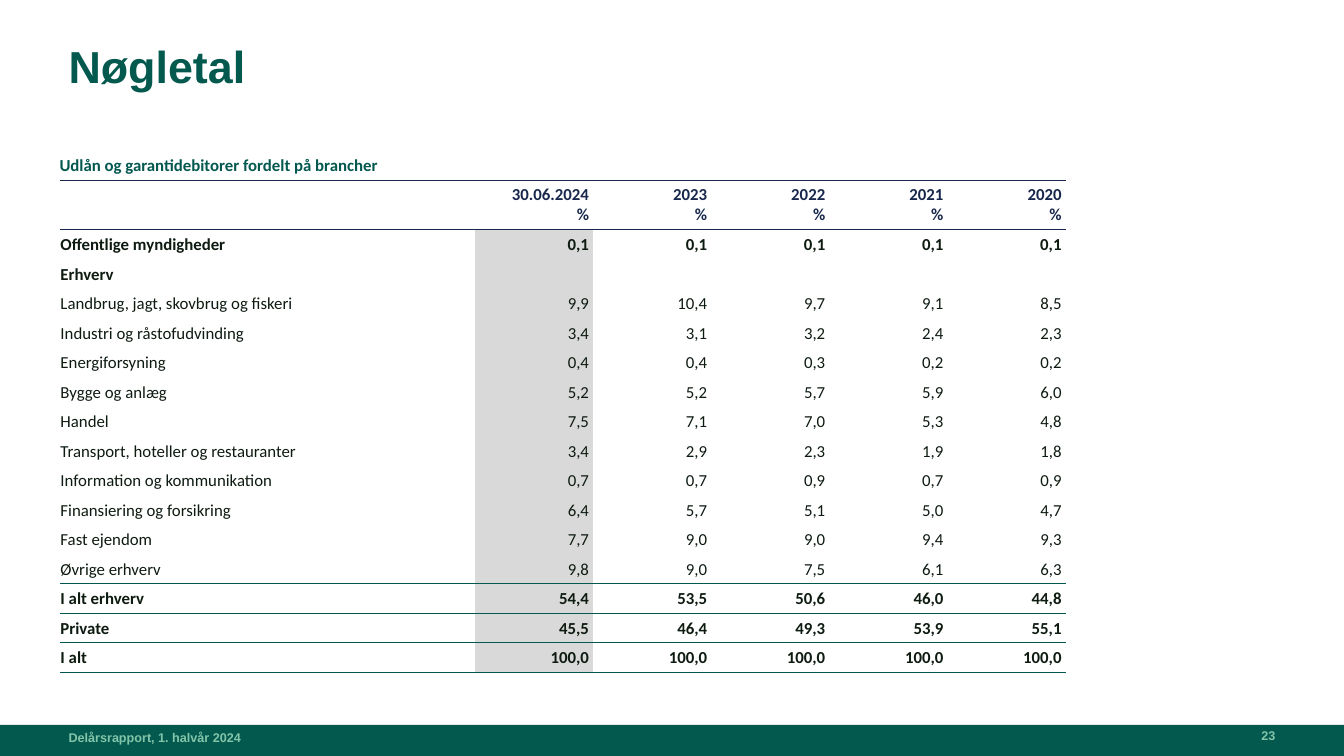
from dataclasses import dataclass

from lxml.etree import SubElement
from pptx import Presentation
from pptx.dml.color import RGBColor
from pptx.enum.shapes import MSO_SHAPE
from pptx.enum.text import MSO_ANCHOR, PP_ALIGN
from pptx.oxml.ns import qn
from pptx.util import Inches, Pt


@dataclass(frozen=True)
class Theme:
    green: str = "04594F"
    mint: str = "82C5A9"
    table_green: str = "03584F"
    navy: str = "18284D"
    ink: str = "0E1B11"
    grey: str = "D9D9D9"
    heading_font: str = "Arial"
    table_font: str = "Calibri"
    title_size: int = 32
    table_size: int = 12
    footer_size: int = 9


THEME = Theme()
NO_STYLE = "{2D5ABB26-0587-4C30-8999-92F81FD0307C}"
CAPTION = "Udlån og garantidebitorer fordelt på brancher"
YEARS = ["30.06.2024", "2023", "2022", "2021", "2020"]
SECTORS = [
    ("Offentlige myndigheder", "0,1 0,1 0,1 0,1 0,1"),
    ("Erhverv", ""),
    ("Landbrug, jagt, skovbrug og fiskeri", "9,9 10,4 9,7 9,1 8,5"),
    ("Industri og råstofudvinding", "3,4 3,1 3,2 2,4 2,3"),
    ("Energiforsyning", "0,4 0,4 0,3 0,2 0,2"),
    ("Bygge og anlæg", "5,2 5,2 5,7 5,9 6,0"),
    ("Handel", "7,5 7,1 7,0 5,3 4,8"),
    ("Transport, hoteller og restauranter", "3,4 2,9 2,3 1,9 1,8"),
    ("Information og kommunikation", "0,7 0,7 0,9 0,7 0,9"),
    ("Finansiering og forsikring", "6,4 5,7 5,1 5,0 4,7"),
    ("Fast ejendom", "7,7 9,0 9,0 9,4 9,3"),
    ("Øvrige erhverv", "9,8 9,0 7,5 6,1 6,3"),
    ("I alt erhverv", "54,4 53,5 50,6 46,0 44,8"),
    ("Private", "45,5 46,4 49,3 53,9 55,1"),
    ("I alt", "100,0 100,0 100,0 100,0 100,0"),
]
BOLD = {"Offentlige myndigheder", "Erhverv", "I alt erhverv", "Private", "I alt"}
RULED = {"Øvrige erhverv", "I alt erhverv", "Private", "I alt"}


def write(tf, text, *, size, color, font, bold=True, align=PP_ALIGN.LEFT, spacing=None):
    for i, line in enumerate(text.split("\n")):
        p = tf.paragraphs[0] if i == 0 else tf.add_paragraph()
        p.alignment = align
        if spacing:
            p.line_spacing = spacing
        if not line:  # keeps the row height of an empty cell
            SubElement(p._p, qn("a:endParaRPr"), sz=str(size * 100))
            continue
        r = p.add_run()
        r.text = line
        r.font.size, r.font.name, r.font.bold = Pt(size), font, bold
        r.font.color.rgb = RGBColor.from_string(color)


def add_text(s, box, text, *, anchor=MSO_ANCHOR.TOP, **style):
    tf = s.shapes.add_textbox(*map(Inches, box)).text_frame
    tf.word_wrap = True
    tf.vertical_anchor = anchor
    tf.margin_left = tf.margin_right = tf.margin_top = tf.margin_bottom = 0
    write(tf, text, **style)


def add_rule(cell, side, color, width):
    tc_pr = cell._tc.get_or_add_tcPr()
    ln = SubElement(tc_pr, qn(f"a:ln{side}"), w=str(Pt(width)))
    SubElement(SubElement(ln, qn("a:solidFill")), qn("a:srgbClr"), val=color)


def fill_cell(cell, text, *, inset=0.01, anchor=MSO_ANCHOR.BOTTOM, fill=None,
              top=None, bottom=None, **style):
    cell.margin_left = Inches(inset)
    cell.margin_right = cell.margin_top = cell.margin_bottom = Inches(0.04)
    cell.vertical_anchor = anchor
    # Borders go before the fill in the cell properties
    for side, rule in (("T", top), ("B", bottom)):
        if rule:
            add_rule(cell, side, *rule)
    if fill:
        cell.fill.solid()
        cell.fill.fore_color.rgb = RGBColor.from_string(fill)
    else:
        cell.fill.background()
    write(cell.text_frame, text, size=THEME.table_size, font=THEME.table_font, **style)


def add_key_figures(s, box):
    left, top, width, height = box
    label_w, caption_h, header_h = 4.12, 0.38, 0.49
    year_w = (width - label_w) / len(YEARS)
    row_h = (height - caption_h - header_h) / len(SECTORS)
    table = s.shapes.add_table(len(SECTORS) + 2, len(YEARS) + 1,
                               *map(Inches, box)).table
    table._tbl.tblPr.find(qn("a:tableStyleId")).text = NO_STYLE
    table.first_row = table.horz_banding = False
    for i, col in enumerate(table.columns):
        col.width = Inches(year_w if i else label_w)
    for i, row in enumerate(table.rows):
        row.height = Inches((caption_h, header_h)[i] if i < 2 else row_h)

    # Caption and year headings
    navy_rule, thin_rule = (THEME.navy, 1), (THEME.table_green, 0.25)
    for i in range(len(YEARS) + 1):
        fill_cell(table.cell(0, i), "" if i else CAPTION, inset=0,
                  bottom=navy_rule, color=THEME.table_green)
        fill_cell(table.cell(1, i), f"{YEARS[i - 1]}\n%" if i else "", inset=0,
                  anchor=MSO_ANCHOR.TOP, top=navy_rule, color=THEME.navy,
                  align=PP_ALIGN.RIGHT)
    table.cell(0, 0).merge(table.cell(0, len(YEARS)))

    # Sectors and their shares
    for n, (sector, shares) in enumerate(SECTORS):
        values = shares.split() or [""] * len(YEARS)
        above = SECTORS[n - 1][0] if n else None
        for i, text in enumerate([sector, *values]):
            fill_cell(table.cell(n + 2, i), text, color=THEME.ink,
                      bold=sector in BOLD,
                      align=PP_ALIGN.RIGHT if i else PP_ALIGN.LEFT,
                      fill=THEME.grey if i == 1 else None,
                      top=thin_rule if above in RULED else None,
                      bottom=thin_rule if sector in RULED else None)


def add_footer(s, box):
    left, top, width, height = box
    bar = s.shapes.add_shape(MSO_SHAPE.RECTANGLE, *map(Inches, box))
    bar.shadow.inherit = False
    bar.fill.solid()
    bar.fill.fore_color.rgb = RGBColor.from_string(THEME.green)
    bar.line.fill.background()
    style = dict(size=THEME.footer_size, color=THEME.mint, font=THEME.heading_font,
                 anchor=MSO_ANCHOR.BOTTOM)
    add_text(s, (left + 0.68, top - 0.08, 4.92, 0.28),
             "Delårsrapport, 1. halvår 2024", **style)
    add_text(s, (left + width - 1.93, top - 0.1, 1.25, 0.28), "23",
             align=PP_ALIGN.RIGHT, **style)


def main():
    prs = Presentation()
    prs.slide_width, prs.slide_height = Inches(13.33), Inches(7.5)
    s = prs.slides.add_slide(prs.slide_layouts[6])
    add_footer(s, (0, 7.19, 13.33, 0.31))
    add_text(s, (0.68, 0.44, 11.97, 0.68), "Nøgletal", size=THEME.title_size,
             color=THEME.green, font=THEME.heading_font, spacing=0.9)
    add_key_figures(s, (0.59, 1.41, 9.98, 5.26))
    prs.save("out.pptx")


if __name__ == "__main__":
    main()
